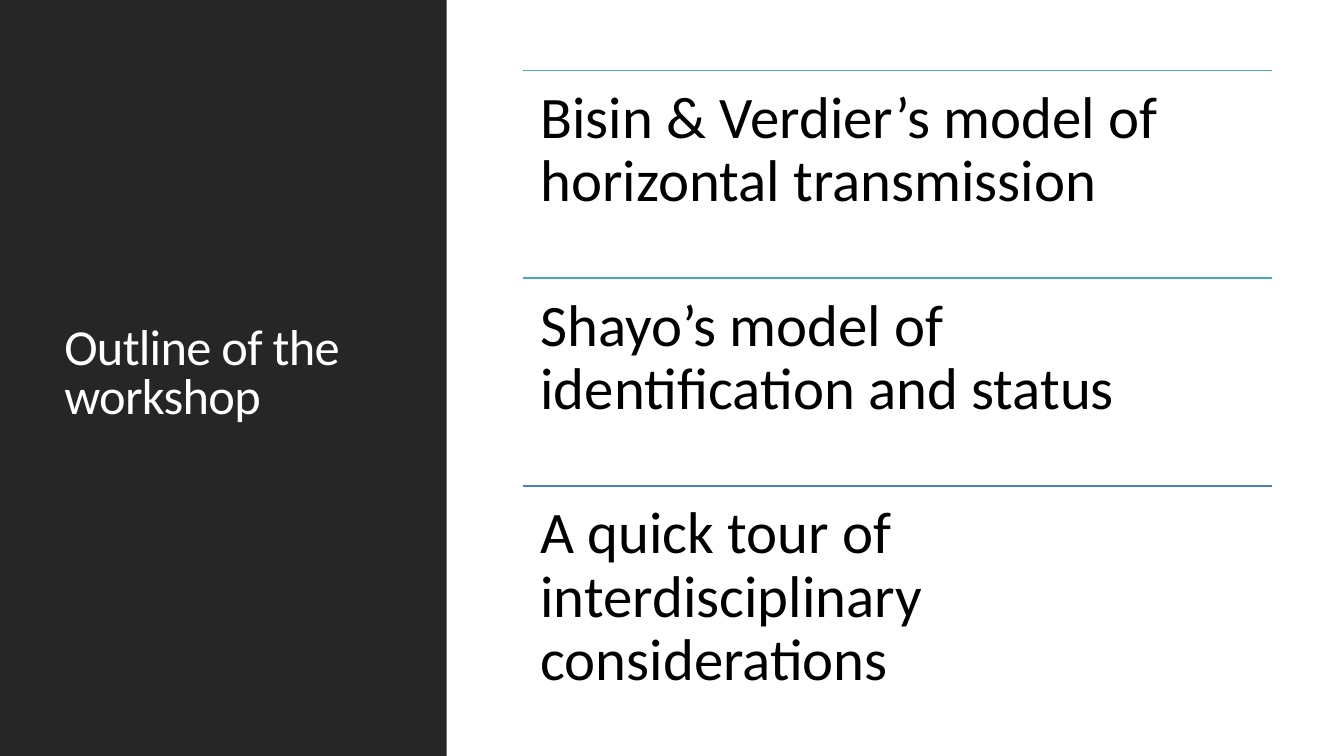
from lxml.etree import SubElement
from pptx import Presentation
from pptx.dml.color import RGBColor
from pptx.enum.shapes import MSO_CONNECTOR, MSO_SHAPE
from pptx.enum.text import MSO_ANCHOR
from pptx.oxml.ns import qn
from pptx.util import Inches, Pt


def color(code):
    return RGBColor.from_string(code)


class Page:
    font = "Calibri"
    dark, light, ink = "262626", "FFFFFF", "000000"

    def __init__(self, deck):
        self.slide = deck.slides.add_slide(deck.slide_layouts[6])
        self.shapes = self.slide.shapes
        fill = self.slide.background.fill
        fill.solid()
        fill.fore_color.rgb = color(self.light)

    def panel(self, *box):
        shape = self.shapes.add_shape(MSO_SHAPE.RECTANGLE, *map(Inches, box))
        shape.shadow.inherit = False
        shape.fill.solid()
        shape.fill.fore_color.rgb = color(self.dark)
        shape.line.fill.background()

    def rule(self, left, top, width, code):
        ends = map(Inches, (left, top, left + width, top))
        line = self.shapes.add_connector(MSO_CONNECTOR.STRAIGHT, *ends)
        line.line.color.rgb = color(code)
        line.line.width = Pt(1.25)
        SubElement(line._element.spPr, qn("a:effectLst"))

    def text(self, words, box, size, code, frame, para, track=None):
        body = self.shapes.add_textbox(*map(Inches, box)).text_frame
        part = body.paragraphs[0]
        run = part.add_run()
        run.text = words
        run.font.color.rgb = color(code)
        face = {"name": self.font, "size": Pt(size)}
        goals = (body, {"word_wrap": True, **frame}), (part, para), (run.font, face)
        for goal, style in goals:
            for name, value in style.items():
                setattr(goal, name, value)
        if track is not None:
            run._r.get_or_add_rPr().set("spc", str(track))


def main():
    deck = Presentation()
    deck.slide_width, deck.slide_height = Inches(13.33), Inches(7.5)
    page = Page(deck)

    # Dark side panel with the title
    page.panel(0, 0, 4.43, 7.5)
    page.text("Outline of the workshop", (0.54, 0.57, 3.37, 6.31), 36, page.light,
              {"vertical_anchor": MSO_ANCHOR.MIDDLE}, {"line_spacing": 0.8}, track=-50)

    # Topics, each under a coloured rule
    topics = [
        ("Bisin & Verdier’s model of horizontal transmission", "46B196"),
        ("Shayo’s model of identification and status", "48A9BC"),
        ("A quick tour of interdisciplinary considerations", "4D7EC3"),
    ]
    left, first, width, step = 5.19, 0.7, 7.43, 2.06
    sides = ("left", "top", "right", "bottom")
    frame = {f"margin_{side}": Inches(0.17) for side in sides}
    frame["vertical_anchor"] = MSO_ANCHOR.TOP
    for i, (words, code) in enumerate(topics):
        top = first + i * step
        page.rule(left, top, width, code)
        page.text(words, (left, top, width, step), 42, page.ink,
                  frame, {"line_spacing": 0.9})

    deck.save("out.pptx")


if __name__ == "__main__":
    main()
